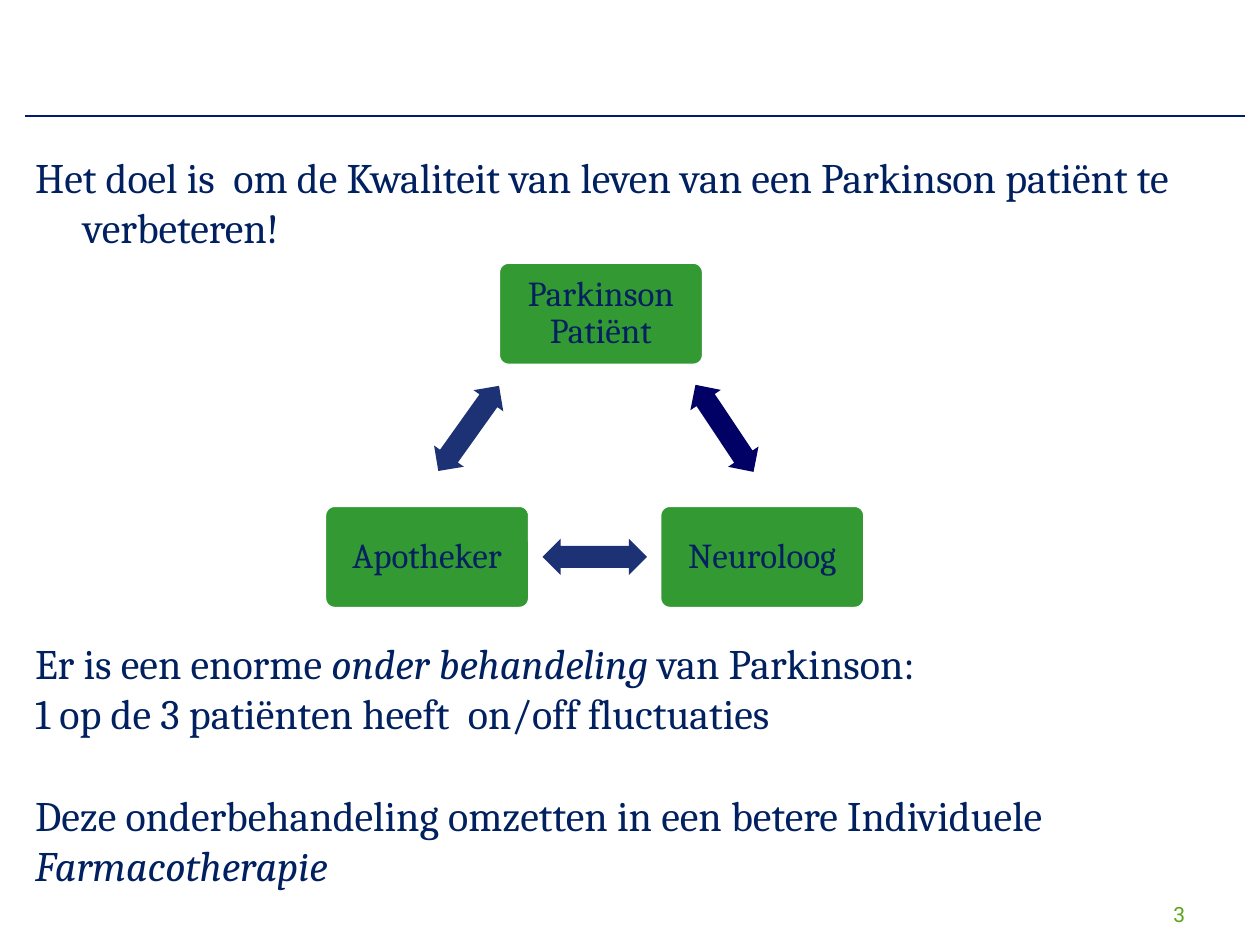
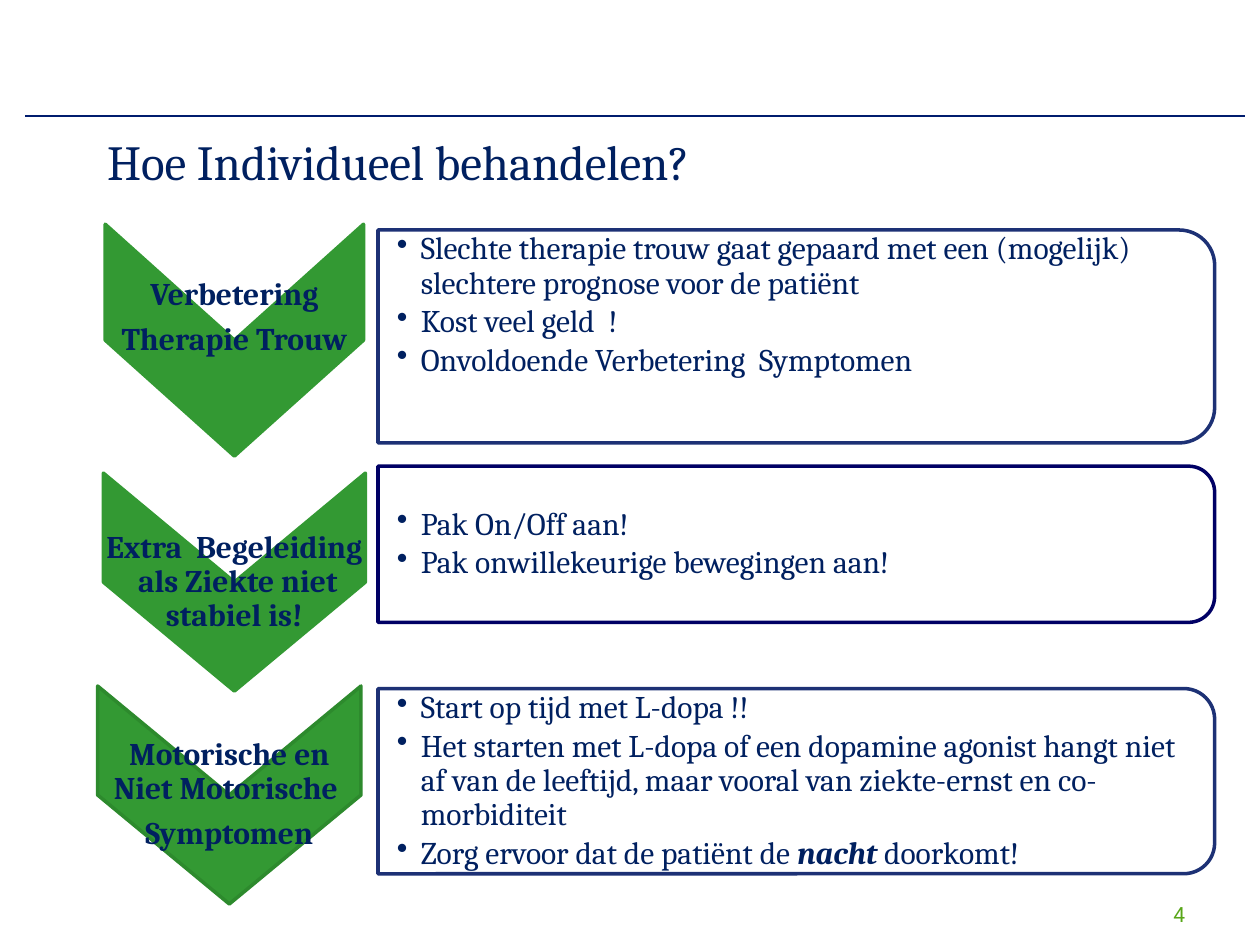
"""Build two slides on the individual treatment of Parkinson patients."""
from lxml import etree
from pptx import Presentation
from pptx.dml.color import RGBColor
from pptx.enum.shapes import MSO_CONNECTOR, MSO_SHAPE
from pptx.enum.text import MSO_ANCHOR, MSO_AUTO_SIZE, PP_ALIGN
from pptx.oxml.ns import qn
from pptx.util import Inches, Pt

STRAIGHT = MSO_CONNECTOR.STRAIGHT
ROLE_BOX = MSO_SHAPE.ROUNDED_RECTANGLE
CHEVRON = MSO_SHAPE.CHEVRON
CARD = MSO_SHAPE.ROUND_2_SAME_RECTANGLE
DOUBLE_ARROW = MSO_SHAPE.LEFT_RIGHT_ARROW
TOP, MIDDLE = MSO_ANCHOR.TOP, MSO_ANCHOR.MIDDLE
LEFT, CENTER = PP_ALIGN.LEFT, PP_ALIGN.CENTER
NO_AUTOFIT = MSO_AUTO_SIZE.NONE
TITLE_ONLY, BLANK = 5, 6

COLORS = {
    "text": "002060",
    "rule": "001C6E",
    "number": "58A618",
    "green": "339933",
    "dark_green": "2D8A2D",
    "blue": "1D3175",
    "navy": "000065",
    "white": "FFFFFF",
}
ITALIC = {"italic": True}
BOLD_ITALIC = {"bold": True, "italic": True}

BODY = {"font": {"size": Pt(24)}}
HEADING = {"font": {"size": Pt(28)}, "paragraph": {"alignment": LEFT}}
NUMBER = {
    "font": {"size": Pt(12), "name": "Roboto"},
    "color": "number",
    "paragraph": {"alignment": CENTER},
}
ROLE = {
    "font": {"size": Pt(20)},
    "paragraph": {"alignment": CENTER, "line_spacing": 0.9},
    "frame": {"vertical_anchor": MIDDLE},
    "margin": 0.08,
}
STEP = {
    "font": {"size": Pt(18), "bold": True},
    "paragraph": {"alignment": CENTER, "line_spacing": 0.9, "space_after": Pt(6.3)},
    "frame": {"vertical_anchor": MIDDLE},
    "margin": 0.01,
}
ADVICE = {
    "font": {"size": Pt(18)},
    "paragraph": {"line_spacing": 0.9, "space_after": Pt(2.7)},
    "frame": {"vertical_anchor": MIDDLE, "margin_left": Inches(0.14)},
    "margin": 0.01,
    "hanging": 0.19,
    "bullet": "•",
}


def apply(target, values):
    """Set every attribute in values on target."""
    for attribute, value in values.items():
        setattr(target, attribute, value)


def rgb(color):
    """Return a palette colour."""
    return RGBColor.from_string(COLORS[color])


class Deck:
    """Hold the shared style and the current slide."""

    def __init__(self):
        """Open an empty 4:3 presentation."""
        self.presentation = Presentation()
        self.presentation.slide_width = Inches(10)
        self.presentation.slide_height = Inches(7.5)
        self.slide = None

    def new_slide(self, number, layout=BLANK):
        """Start a slide with the header rule and its number."""
        self.slide = self.presentation.slides.add_slide(
            self.presentation.slide_layouts[layout])
        rule = self.slide.shapes.add_connector(
            STRAIGHT, Inches(0.2), Inches(0.92), Inches(9.88), Inches(0.92))
        rule.line.color.rgb = rgb("rule")
        rule.line.width = Pt(0.75)
        etree.SubElement(rule._element.spPr, qn("a:effectLst"))
        self.text((8.92, 7.11, 0.88, 0.3), [str(number)], NUMBER)

    def title(self, box, heading):
        """Place and format the title placeholder."""
        placeholder = self.slide.shapes.title
        apply(placeholder, dict(zip(("left", "top", "width", "height"), map(Inches, box))))
        self.fill_frame(placeholder.text_frame, [heading], HEADING)

    def text(self, box, paragraphs, style, bottom=None):
        """Add a text box, with an optional bottom inset."""
        frame = self.slide.shapes.add_textbox(*map(Inches, box)).text_frame
        self.fill_frame(frame, paragraphs, style)
        if bottom:
            frame.margin_bottom = Inches(bottom)

    def fill_frame(self, frame, paragraphs, style):
        """Fill a frame with paragraphs, each a string or a list of runs."""
        apply(frame, {"word_wrap": True, "auto_size": NO_AUTOFIT, "vertical_anchor": TOP})
        if "margin" in style:
            for side in ("left", "top", "right", "bottom"):
                setattr(frame, f"margin_{side}", Inches(style["margin"]))
        apply(frame, style.get("frame", {}))
        for index, runs in enumerate(paragraphs):
            paragraph = frame.add_paragraph() if index else frame.paragraphs[0]
            apply(paragraph, style.get("paragraph", {}))
            self.indent(paragraph, style)
            for words, emphasis in [(runs, {})] if isinstance(runs, str) else runs:
                run = paragraph.add_run()
                run.text = words
                apply(run.font, {"name": "Cambria", **style["font"], **emphasis})
                run.font.color.rgb = rgb(style.get("color", "text"))

    def indent(self, paragraph, style):
        """Give a paragraph its hanging indent and bullet."""
        properties = paragraph._p.get_or_add_pPr()
        if "hanging" in style:
            hanging = Inches(style["hanging"])
            properties.set("marL", str(hanging))
            properties.set("indent", str(-hanging))
        if "bullet" in style:
            etree.SubElement(properties, qn("a:buChar")).set("char", style["bullet"])

    def shape(self, kind, center, size, fill, line=None, rotation=0, adjustments=(), opacity=100):
        """Add a preset shape around its centre."""
        left, top = (middle - length / 2 for middle, length in zip(center, size))
        shape = self.slide.shapes.add_shape(
            kind, Inches(left), Inches(top), *map(Inches, size))
        shape.shadow.inherit = False
        shape.rotation = rotation
        for index, value in enumerate(adjustments):
            shape.adjustments[index] = value
        shape.fill.solid()
        shape.fill.fore_color.rgb = rgb(fill)
        if opacity < 100:
            color = shape._element.spPr.find(qn("a:solidFill"))[0]
            etree.SubElement(color, qn("a:alpha")).set("val", str(opacity * 1000))
        if line:
            shape.line.color.rgb = rgb(line)
            shape.line.width = Pt(2)
        else:
            shape.line.fill.background()
        return shape

    def role(self, center, name):
        """Add a labelled box of the care triangle."""
        box = self.shape(ROLE_BOX, center, (1.63, 0.82), "green", "white", adjustments=(0.1,))
        self.fill_frame(box.text_frame, [name], ROLE)

    def arrow(self, center, rotation, color):
        """Add a double arrow between two roles."""
        self.shape(DOUBLE_ARROW, center, (0.83, 0.29), color,
                   rotation=rotation, adjustments=(0.6, 0.5))

    def step(self, center, size, outline, label, bottom=None):
        """Add a downward chevron with its label."""
        length, width = size
        self.shape(CHEVRON, center, size, "green", outline, rotation=90)
        x, y = center
        self.text((x - width / 2, y - length / 2, width, length), label, STEP, bottom)

    def card(self, middle, height, outline, advice, bottom=None):
        """Add a card rounded on the right with bulleted advice."""
        self.shape(CARD, (6.32, middle), (height, 6.64), "white", outline,
                   rotation=90, opacity=90)
        inner = height - 0.15
        self.text((3.01, middle - inner / 2, 6.57, inner), advice, ADVICE, bottom)


def build_goal(deck):
    """Build the slide on the goal of treatment."""
    deck.new_slide(3)
    deck.text(
        (0.18, 1.15, 9.8, 0.87),
        ["Het doel is  om de Kwaliteit van leven van een Parkinson patiënt te verbeteren!"],
        {**BODY, "hanging": 0.38})
    roles = [((4.77, 2.49), "Parkinson Patiënt"), ((6.05, 4.42), "Neuroloog"),
             ((3.39, 4.42), "Apotheker")]
    for center, name in roles:
        deck.role(center, name)
    arrows = [((5.75, 3.4), 56.3, "navy"), ((4.72, 4.42), 180, "blue"),
              ((3.72, 3.4), 305.5, "blue")]
    for center, rotation, color in arrows:
        deck.arrow(center, rotation, color)
    undertreatment = [
        [("Er is een enorme ", {}), ("onder behandeling", ITALIC), (" van Parkinson:", {})],
        "1 op de 3 patiënten heeft  on/off fluctuaties",
        [("Deze onderbehandeling omzetten in een betere Individuele", {}),
         (" Farmacotherapie", ITALIC)],
    ]
    deck.text((0.18, 5.01, 9.5, 1.89), undertreatment, BODY)
    deck.slide.shapes[-1].text_frame.paragraphs[-1].space_before = Pt(29)


def build_treatment(deck):
    """Build the slide on individual treatment."""
    deck.new_slide(4, TITLE_ONLY)
    deck.title((0.75, 0.99, 9.06, 0.79), "Hoe Individueel behandelen?")
    deck.step((1.86, 2.7), (1.84, 2.05), "green", ["Verbetering", "Therapie Trouw"], 0.37)
    deck.card(2.67, 1.69, "blue", [
        "Slechte therapie trouw gaat gepaard met een (mogelijk) slechtere prognose "
        "voor de patiënt",
        "Kost veel geld  !",
        "Onvoldoende Verbetering  Symptomen",
    ], 0.5)
    deck.step((1.86, 4.62), (1.73, 2.08), "green",
              ["Extra  Begeleiding  als Ziekte niet stabiel is!"])
    deck.card(4.32, 1.24, "navy", ["Pak On/Off aan!", "Pak onwillekeurige bewegingen aan!"])
    deck.step((1.82, 6.31), (1.73, 2.09), "dark_green",
              ["Motorische en Niet Motorische ", "Symptomen"])
    deck.card(6.2, 1.47, "blue", [
        "Start op tijd met L-dopa !!",
        "Het starten met L-dopa of een dopamine agonist hangt niet af van de leeftijd, "
        "maar vooral van ziekte-ernst en co-morbiditeit",
        [("Zorg ervoor dat de patiënt de ", {}), ("nacht", BOLD_ITALIC), (" doorkomt!", {})],
    ])


def main():
    """Build and save the presentation."""
    deck = Deck()
    build_goal(deck)
    build_treatment(deck)
    deck.presentation.save("out.pptx")


if __name__ == "__main__":
    main()
